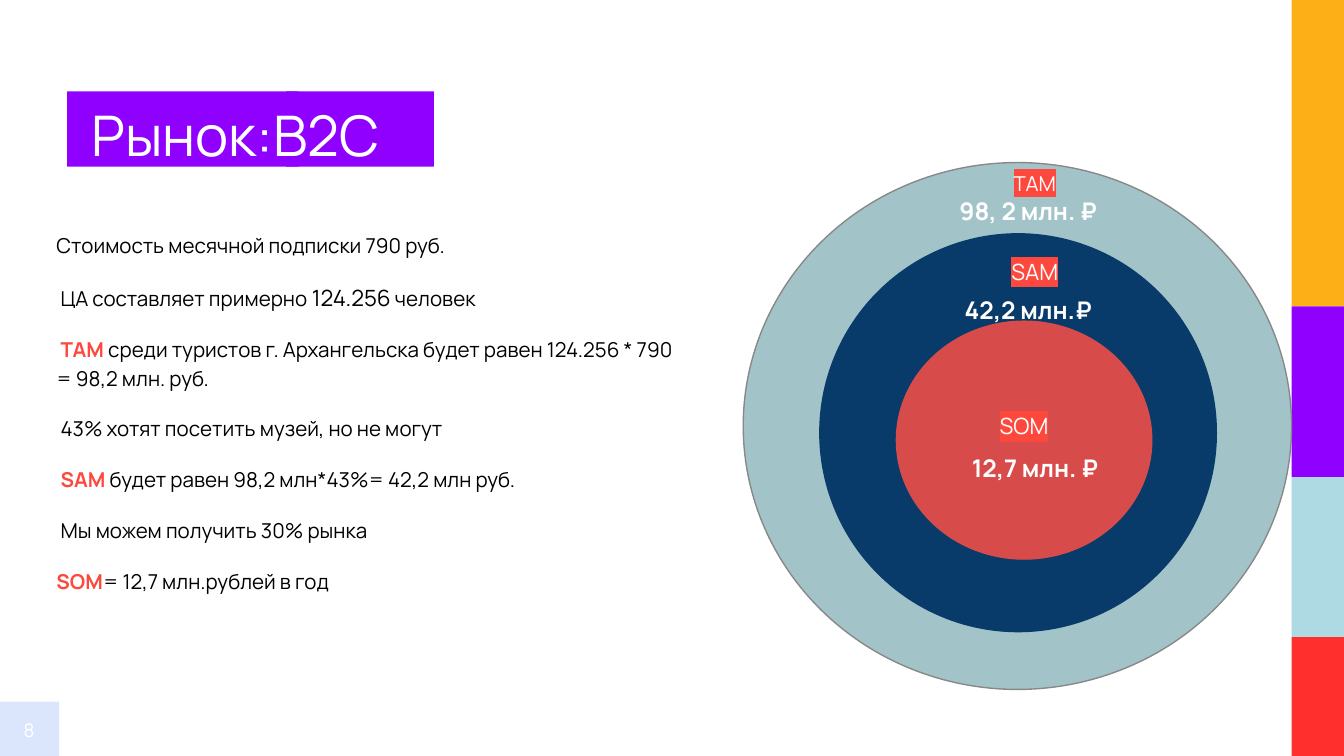
from lxml.etree import SubElement
from pptx import Presentation
from pptx.dml.color import RGBColor
from pptx.enum.shapes import MSO_SHAPE as Shape
from pptx.enum.text import MSO_ANCHOR as Anchor, MSO_AUTO_SIZE as AutoSize, PP_ALIGN as Align
from pptx.oxml.ns import qn
from pptx.util import Inches, Pt

COLORS = {
    "violet": "8F00FF", "pale": "DBE6FD", "orange": "FCAF17", "red": "FF2F2D",
    "sky": "ADDAE3", "coral": "FD493D", "black": "000000", "white": "FFFFFF",
    "tam": "A2C4C9", "tam_line": "888888", "sam": "083B6A", "som": "D74B4B",
}
FONT = "Manrope"
TITLE = "Рынок:B2C"
PAGE_NUMBER = "8"
TEXT = ("black", 11, False)
LARGE = ("black", 12, False)
TERM = ("coral", 11, True)
PARAGRAPHS = [
    [("Стоимость месячной подписки 790 руб.", TEXT)],
    [(" ЦА составляет примерно ", TEXT), ("124.256", LARGE), (" человек", TEXT)],
    [(" TAM", TERM),
     (" среди туристов г. Архангельска будет равен 124.256 * 790 = 98,2 млн. руб.", TEXT)],
    [(" 43% хотят посетить музей, но не могут", TEXT)],
    [(" SAM ", TERM), ("будет равен 98,2 млн*43%= 42,2 млн руб.", TEXT)],
    [(" Мы можем получить 30% рынка", TEXT)],
    [("SOM", TERM), ("= 12,7 млн.рублей в год", TEXT)],
]
BADGE = (-0.01, 5.22, 0.45, 0.42)
TITLE_BARS = [(2.13, 0.68, 1.1, 0.56), (0.5, 0.68, 1.72, 0.56)]
STRIPES = [("orange", 2.28), ("violet", 1.27), ("sky", 1.19), ("red", 0.9)]
RINGS = [
    ("tam", "tam_line", (5.53, 1.21, 4.08, 3.92)),
    ("sam", "sam", (6.1, 1.74, 2.95, 2.96)),
    ("som", "som", (6.67, 2.39, 1.9, 1.77)),
]
RING_LABELS = [
    ("TAM", 11, (7.27, 1.23, 0.86, 0.26), "98, 2 млн. ₽", (6.67, 1.42, 1.96, 0.29)),
    ("SAM", 12, (7.27, 1.88, 0.86, 0.28), "42,2 млн.₽", (6.73, 2.16, 1.84, 0.29)),
    ("SOM", 12, (7.19, 3.03, 0.86, 0.28), "12,7 млн. ₽", (6.78, 3.33, 1.84, 0.29)),
]


def rgb(name):
    return RGBColor.from_string(COLORS[name])


def add_run(paragraph, text, color, size, bold=False, highlight=None):
    run = paragraph.add_run()
    run.text = text
    run.font.size, run.font.bold, run.font.name = Pt(size), bold, FONT
    run.font.color.rgb = rgb(color)
    if highlight:
        properties = run.font._element
        mark = SubElement(properties, qn("a:highlight"))
        SubElement(mark, qn("a:srgbClr"), val=COLORS[highlight])
        properties.find(qn("a:solidFill")).addnext(mark)


def add_filled(slide, kind, box, fill, line=None):
    shape = slide.shapes.add_shape(kind, *map(Inches, box))
    shape.shadow.inherit = False
    shape.fill.solid()
    shape.fill.fore_color.rgb = rgb(fill)
    if line:
        shape.line.color.rgb = rgb(line)
        shape.line.width = Pt(0.75)
    else:
        shape.line.fill.background()
    return shape


def set_frame(frame, horizontal, vertical, anchor=Anchor.TOP):
    frame.word_wrap = True
    frame.auto_size = AutoSize.NONE
    frame.vertical_anchor = anchor
    frame.margin_left = frame.margin_right = Inches(horizontal)
    frame.margin_top = frame.margin_bottom = Inches(vertical)


def place(slide, shape, box):
    shape.left, shape.top, shape.width, shape.height = map(Inches, box)
    slide.shapes.element.append(shape.element)


def add_label(slide, text, box, size, bold=False, highlight=None):
    label = slide.shapes.add_textbox(*map(Inches, box))
    set_frame(label.text_frame, 0.07, 0.04)
    paragraph = label.text_frame.paragraphs[0]
    paragraph.alignment = Align.CENTER
    add_run(paragraph, text, "white", size, bold, highlight)


def fill_title(slide):
    title = slide.shapes.title
    place(slide, title, (0.62, 0.68, 2.38, 0.63))
    set_frame(title.text_frame, 0.06, 0.06, Anchor.MIDDLE)
    paragraph = title.text_frame.paragraphs[0]
    paragraph.alignment = Align.LEFT
    add_run(paragraph, TITLE, "white", 30)


def fill_body(slide):
    body = slide.placeholders[1]
    place(slide, body, (0.32, 1.61, 4.89, 2.91))
    frame = body.text_frame
    set_frame(frame, 0.1, 0.1)
    for index, runs in enumerate(PARAGRAPHS):
        paragraph = frame.add_paragraph() if index else frame.paragraphs[0]
        paragraph.line_spacing, paragraph.space_before = 1.15, Pt(12)
        properties = paragraph._p.get_or_add_pPr()
        properties.set("marL", "0")
        properties.set("indent", "0")
        SubElement(properties, qn("a:buNone"))
        for text, style in runs:
            add_run(paragraph, text, *style)


def main():
    """Build the B2C market slide with its nested TAM, SAM and SOM circles."""
    presentation = Presentation()
    presentation.slide_width = Inches(10)
    presentation.slide_height = Inches(10 * 9 / 16)
    slide = presentation.slides.add_slide(presentation.slide_layouts[1])

    for box in TITLE_BARS:
        add_filled(slide, Shape.RECTANGLE, box, "violet")
    fill_title(slide)

    badge = add_filled(slide, Shape.RECTANGLE, BADGE, "pale")
    set_frame(badge.text_frame, 0, 0, Anchor.MIDDLE)
    number = badge.text_frame.paragraphs[0]
    number.alignment = Align.CENTER
    add_run(number, PAGE_NUMBER, "white", 10)

    top = 0
    for color, height in STRIPES:
        add_filled(slide, Shape.RECTANGLE, (9.61, top, 0.39, height), color)
        top += height

    fill_body(slide)
    for fill, line, box in RINGS:
        add_filled(slide, Shape.OVAL, box, fill, line)
    for name, size, name_box, value, value_box in RING_LABELS:
        add_label(slide, name, name_box, size, highlight="coral")
        add_label(slide, value, value_box, 13, bold=True)

    presentation.save("out.pptx")


if __name__ == "__main__":
    main()
